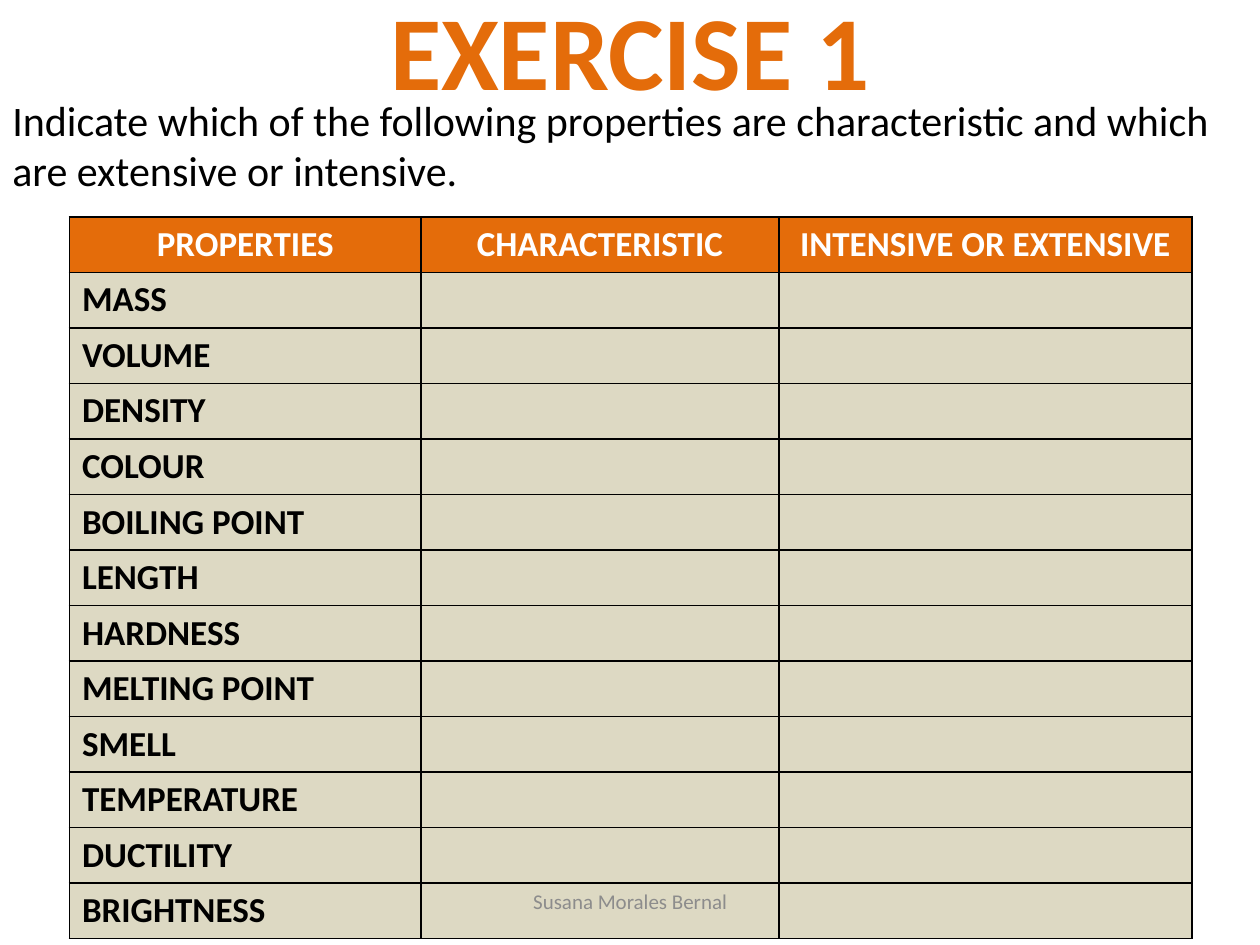
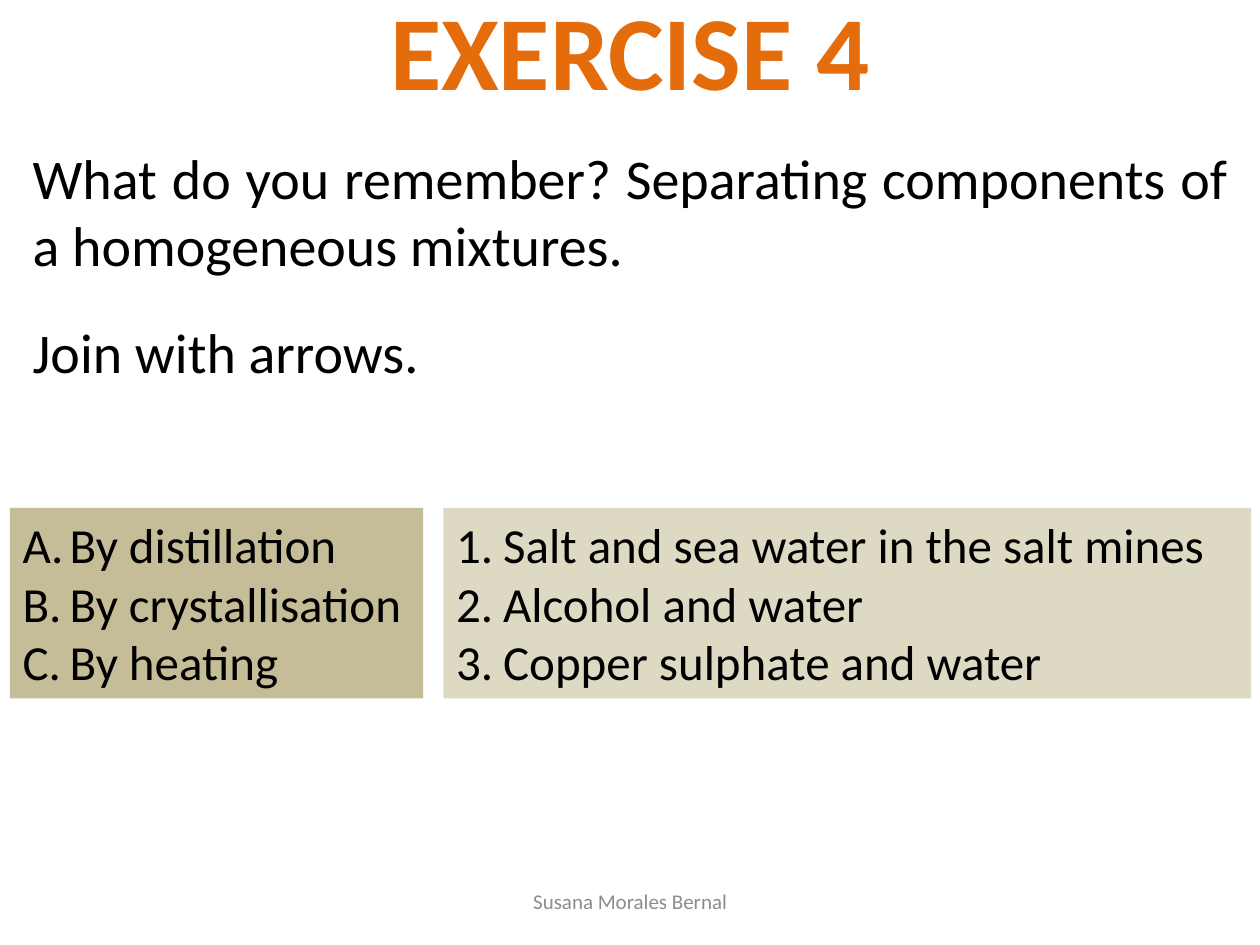
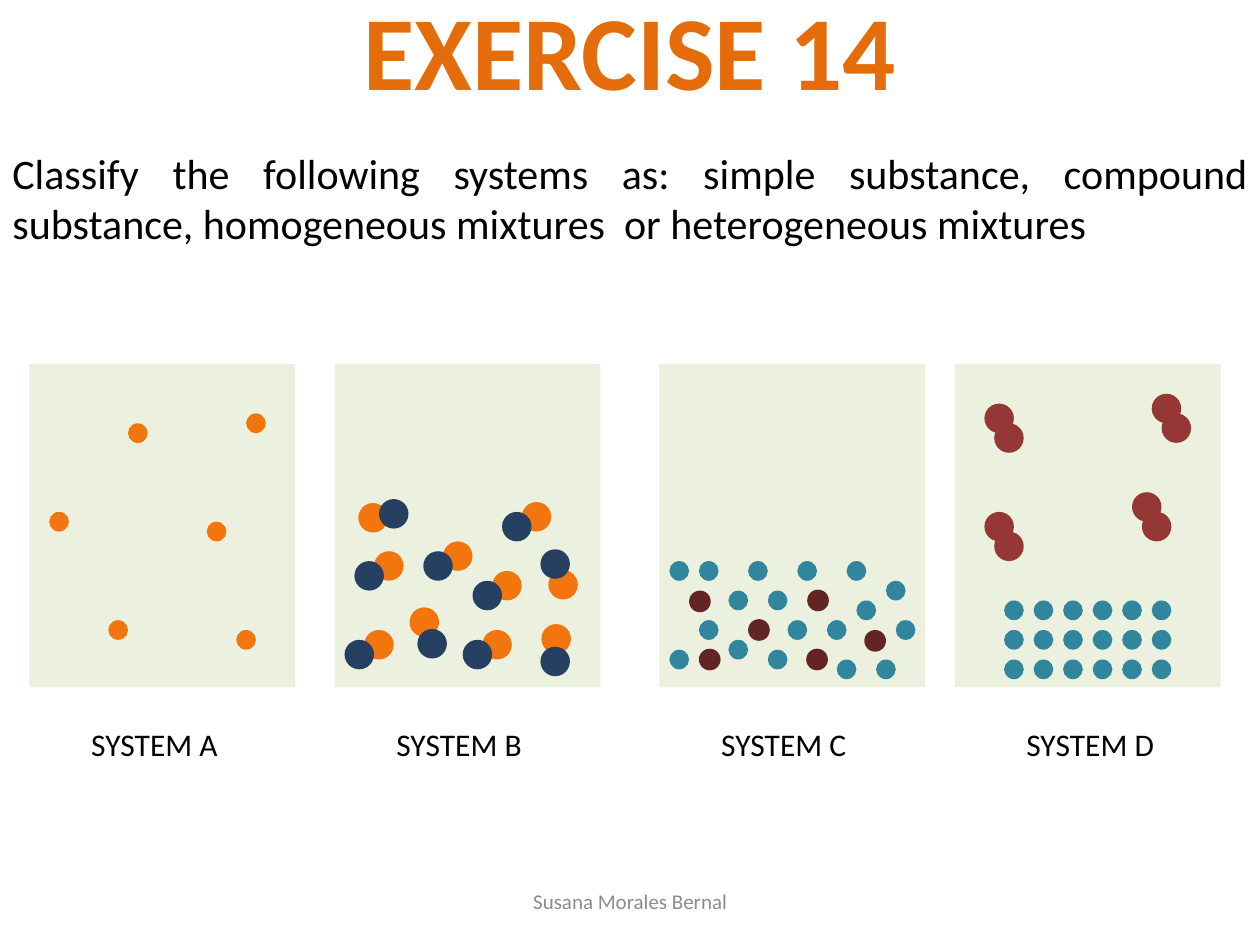
from dataclasses import dataclass

from lxml.etree import SubElement
from pptx import Presentation
from pptx.dml.color import RGBColor
from pptx.enum.shapes import MSO_SHAPE as Shape
from pptx.enum.text import MSO_ANCHOR as Anchor, MSO_AUTO_SIZE as AutoSize, PP_ALIGN as Align
from pptx.oxml.ns import qn
from pptx.util import Cm, Pt


@dataclass(frozen=True)
class Theme:
    font: str = "Calibri"
    accent: str = "E46C0A"
    ink: str = "000000"
    white: str = "FFFFFF"
    muted: str = "8C8C8C"
    sand: str = "DDD9C3"
    dark_sand: str = "C4BD97"
    panel: str = "EBF1DE"
    orange: str = "F2750E"
    navy: str = "254061"
    teal: str = "31859C"
    maroon: str = "632523"
    red: str = "953735"
    title_size: int = 60
    question_size: int = 32
    list_size: int = 28
    prompt_size: int = 24
    table_size: int = 20
    label_size: int = 18
    footer_size: int = 12


theme = Theme()


def write(text_frame, lines, size, color=theme.ink, bold=False, align=Align.LEFT, wrap=True):
    text_frame.word_wrap = wrap
    text_frame.auto_size = AutoSize.NONE
    for index, line in enumerate(lines):
        paragraph = text_frame.add_paragraph() if index else text_frame.paragraphs[0]
        paragraph.alignment = align
        paragraph.space_before = Pt(0)
        run = paragraph.add_run()
        run.text = line
        run.font.name = theme.font
        run.font.size = Pt(size)
        run.font.bold = bold
        run.font.color.rgb = RGBColor.from_string(color)


def add_filled(shapes, preset, color, left, top, width, height):
    shape = shapes.add_shape(preset, Cm(left), Cm(top), Cm(width), Cm(height))
    shape.shadow.inherit = False
    shape.fill.solid()
    shape.fill.fore_color.rgb = RGBColor.from_string(color)
    shape.line.fill.background()


presentation = Presentation()
presentation.slide_width = Cm(25.4)
presentation.slide_height = Cm(19.05)
title_only, two_content = presentation.slide_layouts[5], presentation.slide_layouts[3]

slides = []
for heading, layout in [("EXERCISE 1", title_only), ("EXERCISE 4", two_content), ("EXERCISE 14", title_only)]:
    slide = presentation.slides.add_slide(layout)
    title = slide.shapes.title
    title.left, title.top, title.width, title.height = Cm(0), Cm(-0.43), Cm(25.4), Cm(2.82)
    write(title.text_frame, [heading], theme.title_size, theme.accent, True, Align.CENTER)
    slides.append(slide)
properties_slide, separation_slide, systems_slide = slides

properties = [
    "MASS", "VOLUME", "DENSITY", "COLOUR", "BOILING POINT", "LENGTH",
    "HARDNESS", "MELTING POINT", "SMELL", "TEMPERATURE", "DUCTILITY", "BRIGHTNESS",
]
rows = [["PROPERTIES", "CHARACTERISTIC", "INTENSIVE OR EXTENSIVE"]]
rows += [[name, "", ""] for name in properties]
column_widths = [7.09, 7.21, 8.33]
row_height = 1.09
table = properties_slide.shapes.add_table(
    len(rows), len(column_widths), Cm(1.4), Cm(4.37), Cm(sum(column_widths)), Cm(row_height * len(rows))
).table
for column, width in zip(table.columns, column_widths):
    column.width = Cm(width)
for row_index, row in enumerate(rows):
    table.rows[row_index].height = Cm(row_height)
    header = row_index == 0
    for column_index, text in enumerate(row):
        cell = table.cell(row_index, column_index)
        cell_properties = cell._tc.get_or_add_tcPr()
        for side in ("a:lnL", "a:lnR", "a:lnT", "a:lnB"):
            border = SubElement(cell_properties, qn(side), w=str(Pt(1)))
            SubElement(SubElement(border, qn("a:solidFill")), qn("a:srgbClr"), val=theme.ink)
        cell.fill.solid()
        cell.fill.fore_color.rgb = RGBColor.from_string(theme.accent if header else theme.sand)
        if text:
            write(cell.text_frame, [text], theme.table_size, theme.white if header else theme.ink,
                  True, Align.CENTER if header else Align.LEFT)

prompts = [
    (properties_slide, "Indicate which of the following properties are characteristic and which are extensive or intensive.",
     theme.prompt_size, Align.LEFT, True, (0, 1.78, 25.4, 2.31)),
    (separation_slide, "What do you remember? Separating components of a homogeneous mixtures.",
     theme.question_size, Align.JUSTIFY, True, (0.41, 2.77, 24.61, 3)),
    (separation_slide, "Join with arrows.",
     theme.question_size, Align.LEFT, False, (0.41, 6.27, 8.38, 1.63)),
    (systems_slide, "Classify the following systems as: simple substance, compound substance, homogeneous mixtures  or heterogeneous mixtures",
     theme.prompt_size, Align.JUSTIFY, True, (0, 2.84, 25.4, 2.31)),
]
for slide, text, size, align, wrap, box in prompts:
    prompt = slide.shapes.add_textbox(*map(Cm, box))
    write(prompt.text_frame, [text], size, align=align, wrap=wrap)

matching_lists = [
    (1, 0.2, 8.33, theme.dark_sand, "alphaUcPeriod",
     ["By distillation", "By crystallisation", "By heating"]),
    (2, 8.94, 16.28, theme.sand, "arabicPeriod",
     ["Salt and sea water in the salt mines", "Alcohol and water", "Copper sulphate and water"]),
]
for placeholder_index, left, width, color, numbering, items in matching_lists:
    body = separation_slide.placeholders[placeholder_index]
    body.left, body.top, body.width, body.height = Cm(left), Cm(10.24), Cm(width), Cm(3.84)
    body.fill.solid()
    body.fill.fore_color.rgb = RGBColor.from_string(color)
    write(body.text_frame, items, theme.list_size)
    for paragraph in body.text_frame.paragraphs:
        paragraph_properties = paragraph._p.get_or_add_pPr()
        paragraph_properties.set("marL", str(Cm(0.95)))
        paragraph_properties.set("indent", str(-Cm(0.95)))
        SubElement(paragraph_properties, qn("a:buFont"), typeface="+mj-lt")
        SubElement(paragraph_properties, qn("a:buAutoNum"), type=numbering)

grid = 25.4 / 128
small, medium, large = 2, 2.2, 3

gas_atoms = [(25, 42), (5, 52), (13, 43), (11, 63), (21, 53), (24, 64)]
compound_pairs = [
    ((37, 64), (35, 65)), ((38, 56), (36, 57)), ((36.4, 51.1), (38.5, 50.7)),
    ((41.6, 61.7), (42.4, 63.9)), ((45, 55), (43, 56)), ((49, 64), (47, 65)),
    ((50, 58), (48, 59)), ((55, 63.4), (54.9, 65.7)), ((55.7, 57.9), (54.9, 55.8)),
    ((53, 51), (51, 52)),
]
solvent_atoms = [
    (68, 66), (74, 60), (74, 65), (78, 66), (80, 63), (78, 60), (71, 63), (68, 57), (71, 57),
    (84, 63), (85, 67), (87, 61), (89, 67), (81, 57), (86, 57), (91, 63), (90, 59), (76, 57),
]
solute_atoms = [(76, 62.9), (71, 65.9), (70, 60), (81.9, 65.9), (87.8, 64), (82, 59.9)]
solid_atoms = [(102 + 3 * column, 61 + 3 * row) for row in range(3) for column in range(6)]
molecules = [(100, 52), (100, 41), (117, 40), (115, 50)]

systems = [
    ("SYSTEM A", 3, 8, [(theme.orange, small, gas_atoms)]),
    ("SYSTEM B", 34, 39, [
        (theme.orange, large, [first for first, second in compound_pairs]),
        (theme.navy, large, [second for first, second in compound_pairs]),
    ]),
    ("SYSTEM C", 67, 72, [(theme.teal, small, solvent_atoms), (theme.maroon, medium, solute_atoms)]),
    ("SYSTEM D", 97, 103, [
        (theme.teal, small, solid_atoms),
        (theme.red, large, molecules + [(x + 1, y + 2) for x, y in molecules]),
    ]),
]
for name, panel_left, label_left, particles in systems:
    group_shapes = systems_slide.shapes.add_group_shape().shapes
    add_filled(group_shapes, Shape.RECTANGLE, theme.panel, panel_left * grid, 37 * grid, 27 * grid, 32.8 * grid)
    label = group_shapes.add_textbox(Cm(label_left * grid), Cm(73 * grid), Cm(16 * grid), Cm(1.02))
    write(label.text_frame, [name], theme.label_size, wrap=False)
    for color, diameter, positions in particles:
        for x, y in positions:
            add_filled(group_shapes, Shape.FLOWCHART_CONNECTOR, color,
                       x * grid, y * grid, diameter * grid, diameter * grid)

for slide in slides:
    footer = slide.shapes.add_textbox(Cm(8.68), Cm(17.65), Cm(8.05), Cm(1.02))
    footer.text_frame.vertical_anchor = Anchor.MIDDLE
    write(footer.text_frame, ["Susana Morales Bernal"], theme.footer_size, theme.muted, align=Align.CENTER)

presentation.save("out.pptx")
